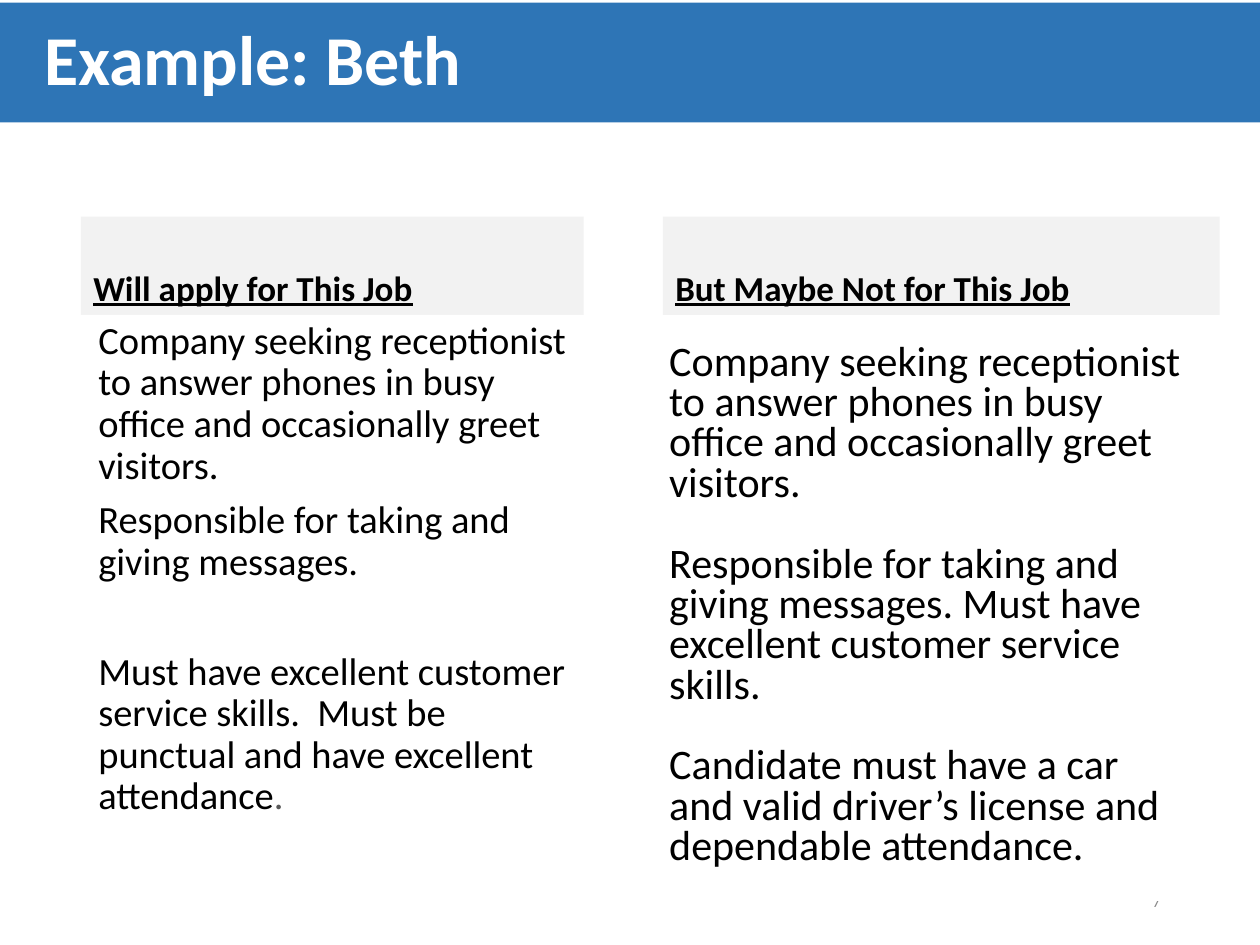
from dataclasses import dataclass

import pptx
import pptx.dml.color
import pptx.enum.shapes
import pptx.enum.text
import pptx.util

Pt = pptx.util.Pt
ALIGN = pptx.enum.text.PP_ALIGN
ANCHOR = pptx.enum.text.MSO_ANCHOR


@dataclass(frozen=True)
class Theme:
    font: str = "Calibri"
    banner: str = "2E75B6"
    panel: str = "F2F2F2"
    paper: str = "FFFFFF"
    ink: str = "000000"
    soft_ink: str = "595959"
    number_ink: str = "898989"
    title_size: int = 40
    heading_size: int = 20
    apply_size: int = 22
    decline_size: int = 24
    number_size: int = 9


THEME = Theme()
INSET = 7.2


def rgb(value):
    return pptx.dml.color.RGBColor.from_string(value)


def add_panel(slide, box, fill, anchor, left_inset=INSET):
    panel = slide.shapes.add_shape(
        pptx.enum.shapes.MSO_SHAPE.RECTANGLE, *map(Pt, box))
    panel.shadow.inherit = False
    panel.fill.solid()
    panel.fill.fore_color.rgb = rgb(fill)
    panel.line.fill.background()
    return prepare_frame(panel.text_frame, anchor, left_inset)


def prepare_frame(frame, anchor, left_inset=INSET):
    frame.word_wrap = True
    frame.vertical_anchor = anchor
    frame.margin_left = Pt(left_inset)
    frame.margin_right = Pt(INSET)
    frame.margin_top = frame.margin_bottom = Pt(INSET / 2)
    return frame


def add_run(paragraph, text, size, color, bold=False, underline=False):
    run = paragraph.add_run()
    run.text = text
    run.font.name = THEME.font
    run.font.size = Pt(size)
    run.font.color.rgb = rgb(color)
    run.font.bold = bold
    run.font.underline = underline


def format_paragraph(paragraph, spacing=0.9, before=0, align=ALIGN.LEFT):
    paragraph.alignment = align
    paragraph.line_spacing = spacing
    paragraph.space_before = Pt(before)
    return paragraph


def add_page_number(slide, number):
    box = slide.shapes.add_textbox(Pt(508.3), Pt(500.4), Pt(162), Pt(28.8))
    frame = prepare_frame(box.text_frame, ANCHOR.MIDDLE)
    paragraph = format_paragraph(frame.paragraphs[0], 1.0, align=ALIGN.RIGHT)
    add_run(paragraph, number, THEME.number_size, THEME.number_ink)


def add_title(slide, text):
    frame = add_panel(slide, (0, 1.5, 720, 68.5), THEME.banner,
                      ANCHOR.MIDDLE, left_inset=25.3)
    add_run(format_paragraph(frame.paragraphs[0]), text,
            THEME.title_size, THEME.paper, bold=True)


def add_heading(slide, left, width, text):
    frame = add_panel(slide, (left, 123.8, width, 56.2), THEME.panel,
                      ANCHOR.BOTTOM)
    add_run(format_paragraph(frame.paragraphs[0], before=7.5), text,
            THEME.heading_size, THEME.ink, bold=True, underline=True)


def add_job(slide, box, indent, size, spacing, statements):
    frame = add_panel(slide, box, THEME.paper, ANCHOR.TOP, INSET + indent)
    for index, (before, runs) in enumerate(statements):
        paragraph = frame.add_paragraph() if index else frame.paragraphs[0]
        format_paragraph(paragraph, spacing, before)
        for text, color in runs:
            add_run(paragraph, text, size, color)


def main():
    deck = pptx.Presentation()
    deck.slide_width, deck.slide_height = Pt(720), Pt(540)
    slide = deck.slides.add_slide(deck.slide_layouts[6])

    duties = ("Company seeking receptionist to answer phones in busy office "
              "and occasionally greet visitors.")
    messages = "Responsible for taking and giving messages."
    ink = THEME.ink

    add_page_number(slide, "7")
    add_title(slide, "Example: Beth")

    add_heading(slide, 46.2, 287.3, "Will apply for This Job")
    add_job(slide, (36, 180, 297.5, 347.8), 13, THEME.apply_size, 0.9, [
        (0, [(duties, ink)]),
        (7.5, [(messages, ink)]),
        (39, [("Must have excellent customer service skills.  Must be "
               "punctual and have excellent attendance", ink),
              (".", THEME.soft_ink)]),
    ])

    add_heading(slide, 378.8, 318.2, "But Maybe Not for This Job")
    add_job(slide, (365.8, 193, 318.2, 321.8), 9.4, THEME.decline_size, 0.8, [
        (0, [(duties, ink)]),
        (23.2, [(messages + " Must have excellent customer service skills.",
                 ink)]),
        (23.2, [("Candidate must have a car and valid driver’s license and "
                 "dependable attendance.", ink)]),
    ])

    deck.save("out.pptx")


if __name__ == "__main__":
    main()
